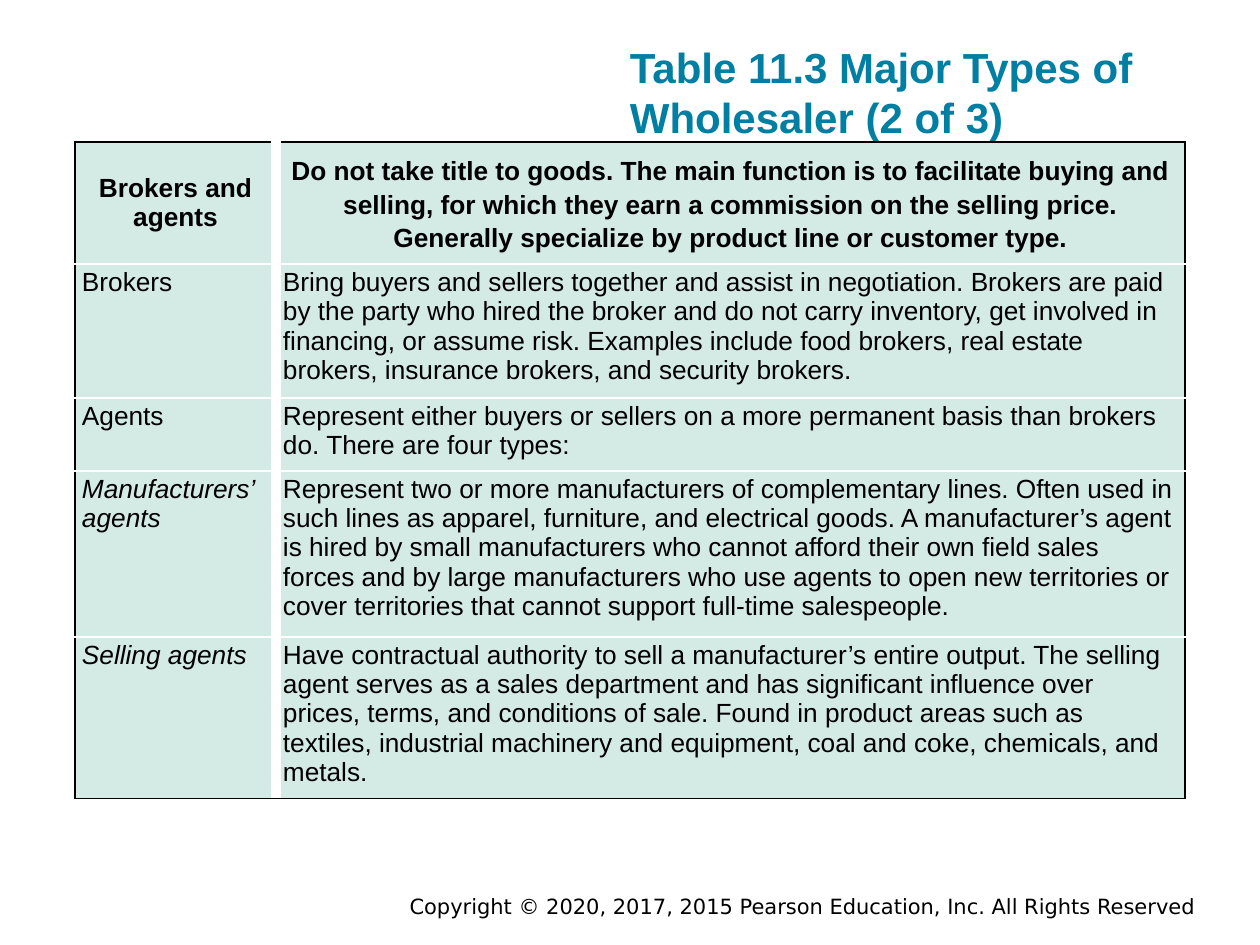
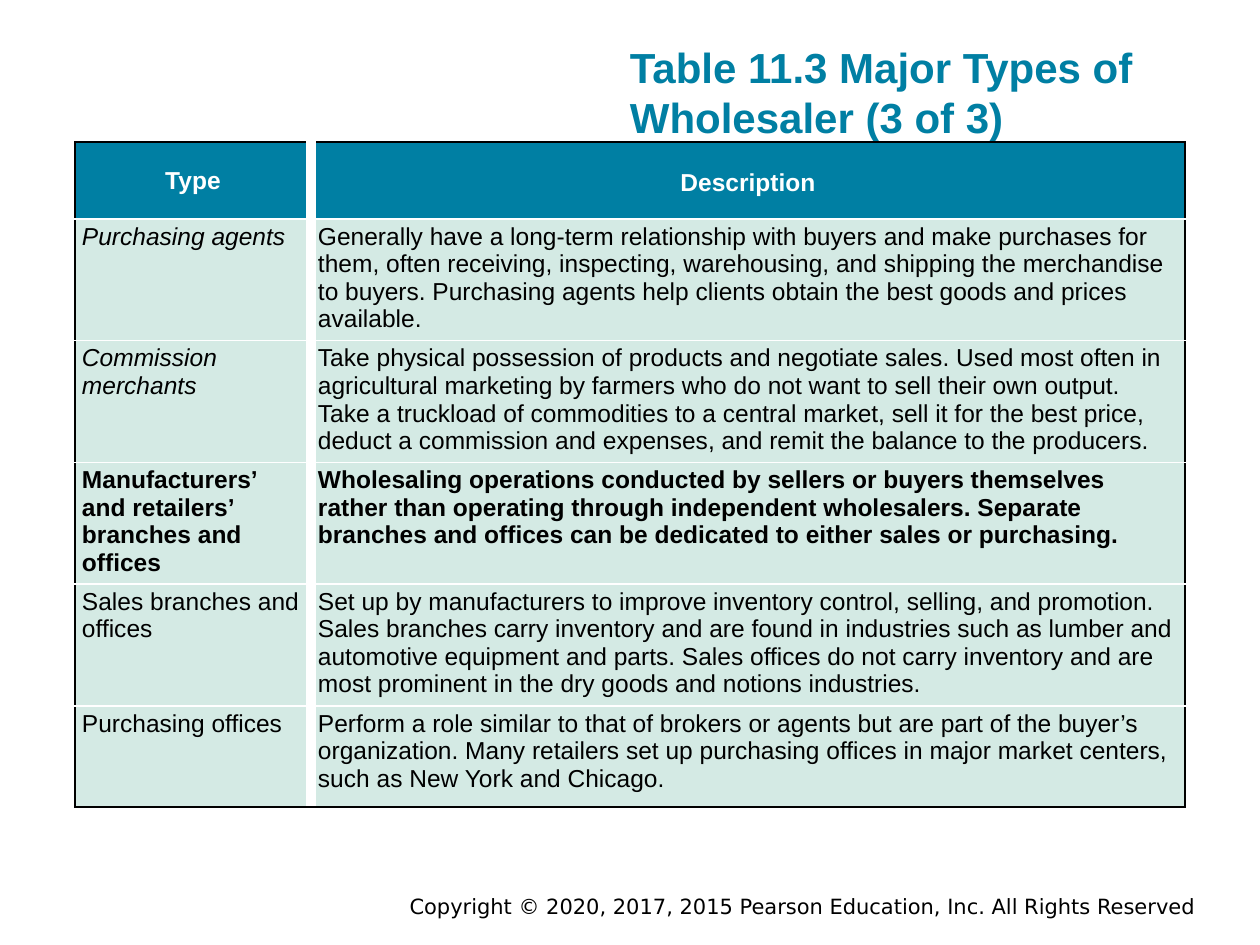
import pptx
import pptx.dml.color
import pptx.enum.text
import pptx.oxml
import pptx.oxml.ns
import pptx.util

COLORS = {"teal": "007FA3", "mint": "D4EAE4", "black": "000000", "white": "FFFFFF"}
FONT, FOOT_FONT = "Arial", "DejaVu Sans"
ALIGN = pptx.enum.text.PP_ALIGN
ANCHOR = pptx.enum.text.MSO_ANCHOR
OUTER, GUTTER, RULE = ("black", 1), ("white", 6), ("white", 0.75)
FOOTER = "Copyright © 2020, 2017, 2015 Pearson Education, Inc. All Rights Reserved"
TITLE = "Table 11.3 Major Types of Wholesaler ({} of 3)"

AGENTS = dict(
    size=15, cols=[201, 909], rows=[122, 134, 73, 166, 154],
    head_fill="mint", head_color="black",
    head=["Brokers and agents",
          "Do not take title to goods. The main function is to facilitate buying and "
          "selling, for which they earn a commission on the selling price. Generally "
          "specialize by product line or customer type."],
    body=[
        ("Brokers", "",
         "Bring buyers and sellers together and assist in negotiation. Brokers are paid "
         "by the party who hired the broker and do not carry inventory, get involved in "
         "financing, or assume risk. Examples include food brokers, real estate brokers, "
         "insurance brokers, and security brokers."),
        ("Agents", "",
         "Represent either buyers or sellers on a more permanent basis than brokers do. "
         "There are four types:"),
        ("Manufacturers’ agents", "italic",
         "Represent two or more manufacturers of complementary lines. Often used in such "
         "lines as apparel, furniture, and electrical goods. A manufacturer’s agent is "
         "hired by small manufacturers who cannot afford their own field sales forces and "
         "by large manufacturers who use agents to open new territories or cover "
         "territories that cannot support full-time salespeople."),
        ("Selling agents", "italic",
         "Have contractual authority to sell a manufacturer’s entire output. The selling "
         "agent serves as a sales department and has significant influence over prices, "
         "terms, and conditions of sale. Found in product areas such as textiles, "
         "industrial machinery and equipment, coal and coke, chemicals, and metals."),
    ])

OFFICES = dict(
    size=14, cols=[236, 874], rows=[77, 117, 119, 117, 122, 101],
    head_fill="teal", head_color="white",
    head=["Type", "Description"],
    body=[
        ("Purchasing agents", "italic",
         "Generally have a long-term relationship with buyers and make purchases for "
         "them, often receiving, inspecting, warehousing, and shipping the merchandise to "
         "buyers. Purchasing agents help clients obtain the best goods and prices "
         "available."),
        ("Commission merchants", "italic",
         "Take physical possession of products and negotiate sales. Used most often in "
         "agricultural marketing by farmers who do not want to sell their own output. "
         "Take a truckload of commodities to a central market, sell it for the best "
         "price, deduct a commission and expenses, and remit the balance to the "
         "producers."),
        ("Manufacturers’ and retailers’ branches and offices", "bold",
         "Wholesaling operations conducted by sellers or buyers themselves rather than "
         "operating through independent wholesalers. Separate branches and offices can be "
         "dedicated to either sales or purchasing."),
        ("Sales branches and offices", "",
         "Set up by manufacturers to improve inventory control, selling, and promotion. "
         "Sales branches carry inventory and are found in industries such as lumber and "
         "automotive equipment and parts. Sales offices do not carry inventory and are "
         "most prominent in the dry goods and notions industries."),
        ("Purchasing offices", "",
         "Perform a role similar to that of brokers or agents but are part of the buyer’s "
         "organization. Many retailers set up purchasing offices in major market centers, "
         "such as New York and Chicago."),
    ])


def px(n):
    return pptx.util.Emu(round(n * 914400 / 126))


def rgb(name):
    return pptx.dml.color.RGBColor.from_string(COLORS[name])


def inset(frame, left, top, right, bottom):
    """Set the margins of a text frame or a table cell."""
    frame.margin_left, frame.margin_top = px(left), px(top)
    frame.margin_right, frame.margin_bottom = px(right), px(bottom)


def write(frame, text, size, color="black", font=FONT, bold=False, italic=False,
          align=ALIGN.LEFT):
    para = frame.paragraphs[0]
    para.alignment = align
    run = para.add_run()
    run.text = text
    run.font.name, run.font.size = font, pptx.util.Pt(size)
    run.font.bold, run.font.italic = bold, italic
    run.font.color.rgb = rgb(color)
    para._p.append(pptx.oxml.parse_xml(
        f'<a:endParaRPr {pptx.oxml.ns.nsdecls("a")} sz="{size * 100}">'
        f'<a:latin typeface="{font}"/></a:endParaRPr>'))
    return para


def add_text(slide, box, text, size, margins=(0, 0, 0, 0), anchor=ANCHOR.TOP, **style):
    frame = slide.shapes.add_textbox(*map(px, box)).text_frame
    frame.word_wrap = True
    frame.vertical_anchor = anchor
    inset(frame, *margins)
    write(frame, text, size, **style)


def edge(cell, side, line):
    color, width = line
    cell._tc.get_or_add_tcPr().append(pptx.oxml.parse_xml(
        f'<a:ln{side} {pptx.oxml.ns.nsdecls("a")} w="{pptx.util.Pt(width)}">'
        f'<a:solidFill><a:srgbClr val="{COLORS[color]}"/></a:solidFill></a:ln{side}>'))


def add_grid(slide, left, top, data):
    rows, cols = data["rows"], data["cols"]
    box = (left, top, sum(cols), sum(rows))
    table = slide.shapes.add_table(len(rows), len(cols), *map(px, box)).table
    table.first_row = table.horz_banding = False
    for col, width in zip(table.columns, cols):
        col.width = px(width)
    for row, height in zip(table.rows, rows):
        row.height = px(height)

    for r in range(len(rows)):
        for c in range(len(cols)):
            cell = table.cell(r, c)
            edge(cell, "L", GUTTER if c else OUTER)
            edge(cell, "R", OUTER if c else GUTTER)
            edge(cell, "T", RULE if r else OUTER)
            edge(cell, "B", OUTER if r == len(rows) - 1 else RULE)
            cell.fill.solid()
            cell.fill.fore_color.rgb = rgb("mint" if r else data["head_fill"])

    for c, text in enumerate(data["head"]):
        cell = table.cell(0, c)
        cell.vertical_anchor = ANCHOR.MIDDLE
        inset(cell, 5, 0, 5, 0)
        para = write(cell.text_frame, text, data["size"], data["head_color"],
                     bold=True, align=ALIGN.CENTER)
        if c:
            para.line_spacing = 1.15

    for r, (kind, style, about) in enumerate(data["body"], 1):
        for c, text in enumerate((kind, about)):
            cell = table.cell(r, c)
            inset(cell, 7, 4, 11, 0)
            write(cell.text_frame, text, data["size"], bold=style == "bold",
                  italic=style == "italic" and c == 0)


def add_page(deck, part, data):
    slide = deck.slides.add_slide(deck.slide_layouts[6])
    add_text(slide, (337, 888, 872, 38), FOOTER, 12, margins=(13, 6, 13, 6),
             font=FOOT_FONT, align=ALIGN.RIGHT)
    add_text(slide, (630, 6, 703, 136), TITLE.format(part), 24,
             anchor=ANCHOR.BOTTOM, color="teal", bold=True)
    add_grid(slide, 75, 142, data)


def main():
    deck = pptx.Presentation()
    deck.slide_width, deck.slide_height = px(1260), px(945)
    add_page(deck, 2, AGENTS)
    add_page(deck, 3, OFFICES)
    deck.save("out.pptx")


if __name__ == "__main__":
    main()
